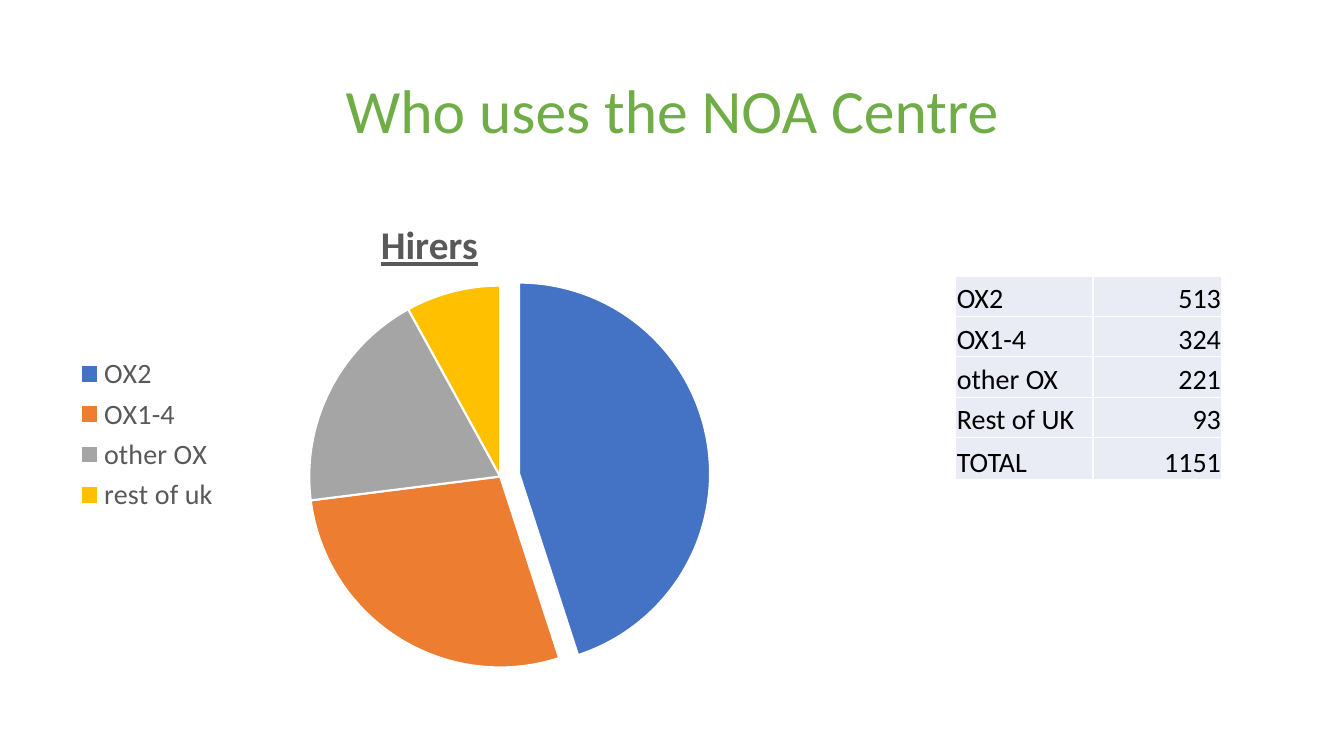
from lxml import etree
from pptx import Presentation
from pptx.chart.data import CategoryChartData
from pptx.dml.color import RGBColor
from pptx.enum.chart import XL_CHART_TYPE, XL_LEGEND_POSITION
from pptx.enum.text import MSO_ANCHOR, PP_ALIGN
from pptx.oxml import parse_xml
from pptx.oxml.ns import nsdecls, qn
from pptx.util import Inches, Pt

TITLE = "Who uses the NOA Centre"
CHART_TITLE = "Hirers"
SERIES_NAME = "Series 1"
SHARES = {"OX2": 45, "OX1-4 ": 28, "other OX": 19, "rest of uk": 8}
HIRER_ROWS = [
    ("OX2", "513"),
    ("OX1-4", "324"),
    ("other OX", "221"),
    ("Rest of UK", "93"),
    ("TOTAL", "1151"),
]
COLUMN_WIDTHS = [1.36, 1.28]
ROW_HEIGHTS = [0.4, 0.4, 0.4, 0.4, 0.42]

FONT = "Calibri"
GREEN = RGBColor(0x70, 0xAD, 0x47)
GREY = RGBColor(0x59, 0x59, 0x59)
BLACK = RGBColor(0, 0, 0)
WHITE = RGBColor(0xFF, 0xFF, 0xFF)
CELL_FILL = RGBColor(0xE9, 0xEB, 0xF5)
SLICE_COLORS = [
    RGBColor(0x44, 0x72, 0xC4),
    RGBColor(0xED, 0x7D, 0x31),
    RGBColor(0xA5, 0xA5, 0xA5),
    RGBColor(0xFF, 0xC0, 0x00),
]
LEFT, CENTER, RIGHT = PP_ALIGN.LEFT, PP_ALIGN.CENTER, PP_ALIGN.RIGHT
MIDDLE, BOTTOM = MSO_ANCHOR.MIDDLE, MSO_ANCHOR.BOTTOM
PIE = XL_CHART_TYPE.PIE
LEGEND_LEFT = XL_LEGEND_POSITION.LEFT


def write_text(frame, text, size, color, align=LEFT, bold=False, underline=False, spacing=None):
    para = frame.paragraphs[0]
    para.alignment = align
    para.line_spacing = spacing
    span = para.add_run()
    span.text = text
    font = span.font
    font.name, font.size, font.bold, font.underline = FONT, Pt(size), bold, underline
    font.color.rgb = color


def layout_xml(inner=False, **fractions):
    parts = '<c:layoutTarget val="inner"/>' if inner else ""
    parts += "".join(f'<c:{key}Mode val="edge"/>' for key in ("x", "y"))
    parts += "".join(f'<c:{key} val="{value}"/>' for key, value in fractions.items())
    return parse_xml(f'<c:layout {nsdecls("c")}><c:manualLayout>{parts}</c:manualLayout></c:layout>')


def place_part(element, layout, index):
    for old in element.findall(qn("c:layout")):
        element.remove(old)
    element.insert(index, layout)


def add_title(page):
    box = page.shapes.add_textbox(Inches(0.92), Inches(0.4), Inches(11.5), Inches(1.45))
    frame = box.text_frame
    frame.word_wrap = True
    frame.vertical_anchor = MIDDLE
    write_text(frame, TITLE, 44, GREEN, align=CENTER, spacing=0.9)


def add_hirers_pie(page):
    data = CategoryChartData()
    data.categories = list(SHARES)
    data.add_series(SERIES_NAME, list(SHARES.values()))
    chart = page.shapes.add_chart(
        PIE, Inches(0.63), Inches(1.85), Inches(7.16), Inches(4.92), data
    ).chart
    chart.font.name, chart.font.size = FONT, Pt(10)
    chart.font.color.rgb = BLACK

    chart.has_title = True
    title = chart.chart_title
    title.include_in_layout = False
    write_text(title.text_frame, CHART_TITLE, 28, GREY, align=CENTER, bold=True, underline=True)
    title_element = title._element
    place_part(title_element, layout_xml(x=0.43, y=0.05), 1)

    chart.has_legend = True
    legend = chart.legend
    legend.position = LEGEND_LEFT
    legend.include_in_layout = False
    legend.font.name, legend.font.size = FONT, Pt(20)
    legend.font.color.rgb = GREY

    plot = chart.plots[0]
    plot.vary_by_categories = True
    plot_area = chart._chartSpace.chart.plotArea
    place_part(plot_area, layout_xml(inner=True, x=0.34, y=0.2, w=0.53, h=0.77), 0)
    for index, color in enumerate(SLICE_COLORS):
        slice_format = plot.series[0].points[index].format
        slice_format.fill.solid()
        slice_format.fill.fore_color.rgb = color
        slice_format.line.color.rgb = WHITE
        slice_format.line.width = Pt(1.5)
    first_slice = plot_area.find(".//" + qn("c:dPt"))
    explosion = etree.Element(qn("c:explosion"), val="10")
    first_slice.find(qn("c:spPr")).addprevious(explosion)


def add_borders(cell):
    properties = cell._tc.get_or_add_tcPr()
    for position, side in enumerate(("lnL", "lnR", "lnT", "lnB")):
        properties.insert(position, parse_xml(
            f'<a:{side} {nsdecls("a")} w="{Pt(1)}"><a:solidFill>'
            f'<a:srgbClr val="{WHITE}"/></a:solidFill></a:{side}>'
        ))


def add_hirers_table(page):
    table = page.shapes.add_table(
        len(HIRER_ROWS), len(COLUMN_WIDTHS), Inches(9.48), Inches(2.74),
        Inches(sum(COLUMN_WIDTHS)), Inches(sum(ROW_HEIGHTS)),
    ).table
    table.first_row = table.horz_banding = False
    for column, width in zip(table.columns, COLUMN_WIDTHS):
        column.width = Inches(width)
    for row, height, texts in zip(table.rows, ROW_HEIGHTS, HIRER_ROWS):
        row.height = Inches(height)
        for cell, text, align in zip(row.cells, texts, (LEFT, RIGHT)):
            cell.margin_left = cell.margin_right = cell.margin_top = Inches(0.01)
            cell.margin_bottom = 0
            cell.vertical_anchor = BOTTOM
            cell.fill.solid()
            cell.fill.fore_color.rgb = CELL_FILL
            add_borders(cell)
            write_text(cell.text_frame, text, 20, BLACK, align=align)


def main():
    deck = Presentation()
    deck.slide_width, deck.slide_height = Inches(13.33), Inches(7.5)
    page = deck.slides.add_slide(deck.slide_layouts[6])
    add_title(page)
    add_hirers_pie(page)
    add_hirers_table(page)
    deck.save("out.pptx")


if __name__ == "__main__":
    main()
